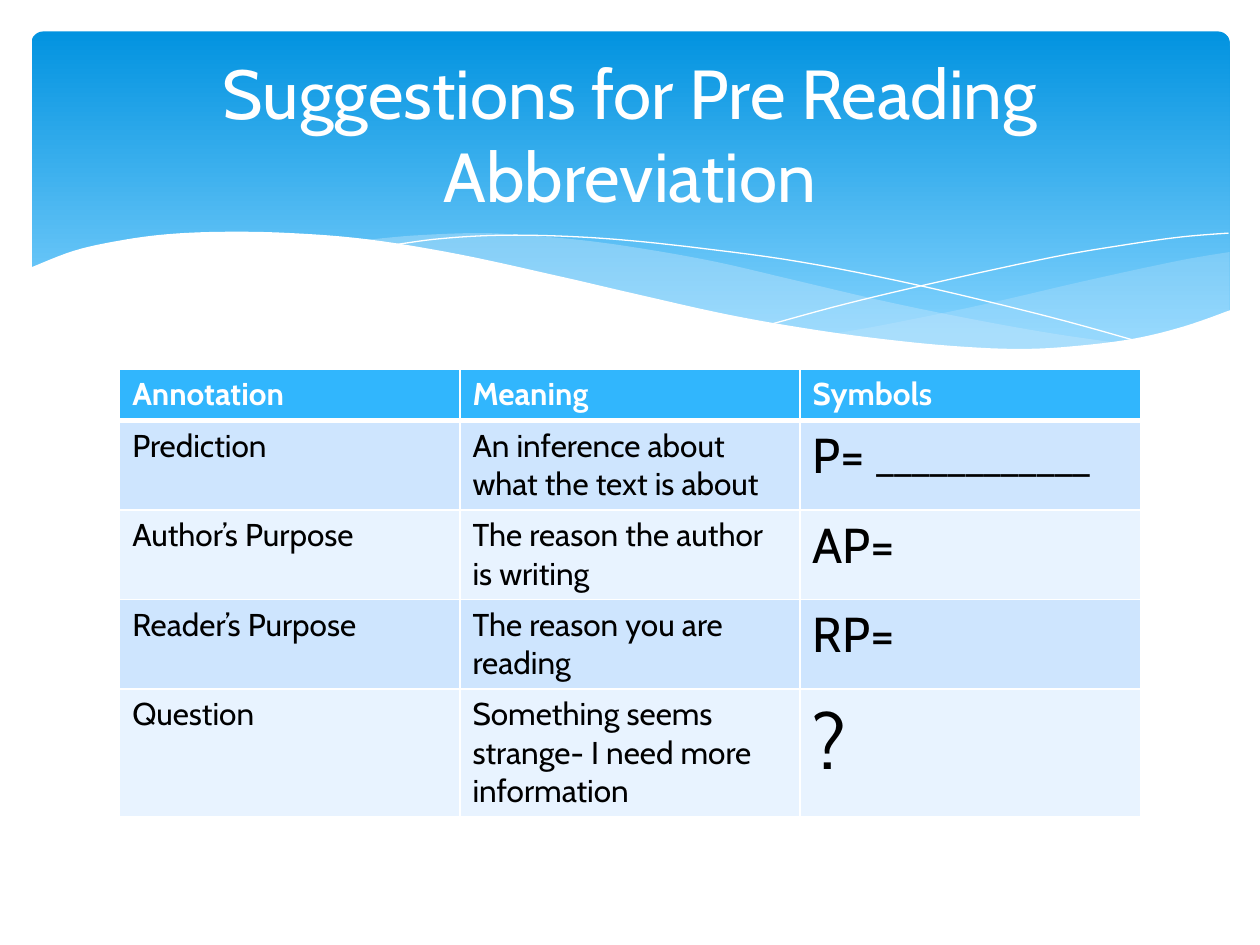
"""Build a slide with a wave banner and a table of pre-reading abbreviations."""
from lxml.etree import SubElement
from pptx import Presentation
from pptx.dml.color import RGBColor
from pptx.enum.shapes import MSO_SHAPE
from pptx.enum.text import MSO_ANCHOR, PP_ALIGN
from pptx.oxml.ns import qn
from pptx.util import Inches, Pt

WHITE = RGBColor(0xFF, 0xFF, 0xFF)
BLACK = RGBColor(0, 0, 0)
BANNER_TOP = RGBColor(0x02, 0x93, 0xE0)
BANNER_BOTTOM = RGBColor(0x83, 0xD3, 0xFE)
WAVE_BLUE = RGBColor(0xC6, 0xE7, 0xFC)
HEADER_BLUE = RGBColor(0x31, 0xB6, 0xFD)
BAND_DARK = RGBColor(0xCE, 0xE5, 0xFE)
BAND_LIGHT = RGBColor(0xE8, 0xF3, 0xFF)
FONT = "Cabin"


def add_text(paragraph, text, size=18, color=BLACK, bold=False):
    run = paragraph.add_run()
    run.text = text
    run.font.name = FONT
    run.font.size = Pt(size)
    run.font.color.rgb = color
    run.font.bold = bold


def smooth_curve(knots, steps=6):
    padded = [knots[0], *knots, knots[-1]]
    points = [tuple(Inches(value) for value in knots[0])]
    for before, start, end, after in zip(padded, padded[1:], padded[2:], padded[3:]):
        for step in range(1, steps + 1):
            t = step / steps
            points.append(tuple(
                Inches((2 * b + (c - a) * t + (2 * a - 5 * b + 4 * c - d) * t ** 2
                        + (3 * b - a - 3 * c + d) * t ** 3) / 2)
                for a, b, c, d in zip(before, start, end, after)))
    return points


presentation = Presentation()
presentation.slide_width = Inches(10)
presentation.slide_height = Inches(7.5)
slide = presentation.slides.add_slide(presentation.slide_layouts[6])

banner = slide.shapes.add_shape(
    MSO_SHAPE.ROUNDED_RECTANGLE, Inches(0.25), Inches(0.25), Inches(9.51), Inches(2.7))
banner.adjustments[0] = 0.034
banner.shadow.inherit = False
banner.line.fill.background()
banner.fill.gradient()
banner.fill.gradient_angle = 270
for stop, position, color in zip(
        banner.fill.gradient_stops, (0, 0.9), (BANNER_TOP, BANNER_BOTTOM)):
    stop.position = position
    stop.color.rgb = color

right_wave = [
    [(9.76, 2), (9.35, 2.07), (8.61, 2.23), (7.79, 2.42), (7.06, 2.57), (6.61, 2.65)],
    [(6.61, 2.65), (7.05, 2.71), (7.57, 2.76), (8.14, 2.78), (8.63, 2.75),
     (9.05, 2.69), (9.42, 2.59), (9.76, 2.47)],
]
middle_wave = [
    [(8.93, 2.73), (8.37, 2.65), (7.75, 2.54), (7.06, 2.4), (6.29, 2.22), (5.69, 2.08),
     (5.14, 1.98), (4.65, 1.91), (4.2, 1.87), (3.8, 1.85), (3.28, 1.87), (2.86, 1.91)],
    [(2.86, 1.91), (3.42, 1.99), (4.04, 2.11), (4.49, 2.22), (5.3, 2.4), (6.01, 2.55),
     (6.65, 2.66), (7.22, 2.74), (7.73, 2.77), (8.18, 2.78), (8.57, 2.77), (8.93, 2.73)],
]
falling_line = [
    [(3.09, 1.95), (3.44, 1.9), (3.87, 1.87), (4.33, 1.87), (4.89, 1.9), (5.56, 1.97),
     (6.36, 2.08), (7.27, 2.26), (8.31, 2.51), (9.07, 2.72)],
]
rising_line = [
    [(6.13, 2.57), (6.72, 2.41), (7.48, 2.23), (8.36, 2.04), (8.95, 1.94),
     (9.38, 1.88), (9.75, 1.85)],
]
white_wave = [
    [(9.77, 2.46), (9.4, 2.59), (8.99, 2.69), (8.5, 2.75), (8.09, 2.77), (7.61, 2.75),
     (7.08, 2.7), (6.48, 2.62), (5.79, 2.5), (5.03, 2.33), (4.47, 2.2), (3.65, 2.02),
     (2.92, 1.9), (2.3, 1.85), (1.77, 1.84), (1.32, 1.86), (0.95, 1.91), (0.59, 1.99),
     (0.23, 2.13)],
    [(0.23, 2.13), (0.23, 3.29)],
    [(0.23, 3.29), (9.77, 3.29)],
]
for curves, fill_color, opacity in (
        (right_wave, WAVE_BLUE, 29), (middle_wave, WAVE_BLUE, 40),
        (falling_line, None, 100), (rising_line, None, 100), (white_wave, WHITE, 100)):
    points = [point for curve in curves for point in smooth_curve(curve)]
    builder = slide.shapes.build_freeform(*points[0])
    builder.add_line_segments(points[1:], close=fill_color is not None)
    shape = builder.convert_to_shape()
    shape.shadow.inherit = False
    if fill_color is None:
        shape.fill.background()
        shape.line.color.rgb = WHITE
        shape.line.width = Pt(0)
        continue
    shape.line.fill.background()
    shape.fill.solid()
    shape.fill.fore_color.rgb = fill_color
    if opacity < 100:
        color_element = shape.fill._xPr.find(qn("a:solidFill"))[0]
        SubElement(color_element, qn("a:alpha"), val=str(opacity * 1000))

rows = [
    ("Annotation", "Meaning", "Symbols", 18),
    ("Prediction", "An inference about what the text is about", "P= ", 28),
    ("Author’s Purpose", "The reason the author is writing", "AP=", 28),
    ("Reader’s Purpose", "The reason you are reading", "RP=", 28),
    ("Question", "Something seems strange- I need more information", "?", 44),
]
row_heights = (0.4, 0.7, 0.7, 0.7, 1.01)
table = slide.shapes.add_table(
    len(rows), 3, Inches(0.95), Inches(2.93), Inches(8.1), Inches(3.51)).table
for column in table.columns:
    column.width = Inches(2.7)
for row_index, (*texts, symbol_size) in enumerate(rows):
    table.rows[row_index].height = Inches(row_heights[row_index])
    is_header = row_index == 0
    for column_index, text in enumerate(texts):
        cell = table.cell(row_index, column_index)
        properties = cell._tc.get_or_add_tcPr()
        for side in ("lnL", "lnR", "lnT", "lnB"):
            under_header = (row_index, side) in ((0, "lnB"), (1, "lnT"))
            border = SubElement(
                properties, qn(f"a:{side}"), w=str(Pt(3 if under_header else 1)))
            border_fill = SubElement(border, qn("a:solidFill"))
            SubElement(border_fill, qn("a:srgbClr"), val=str(WHITE))
        cell.fill.solid()
        cell.fill.fore_color.rgb = (
            HEADER_BLUE if is_header else BAND_DARK if row_index % 2 else BAND_LIGHT)
        add_text(cell.text_frame.paragraphs[0], text,
                 size=symbol_size if column_index == 2 else 18,
                 color=WHITE if is_header else BLACK, bold=is_header)
add_text(table.cell(1, 2).text_frame.paragraphs[0], "_" * 12)

title = slide.shapes.add_textbox(Inches(0.5), Inches(0.37), Inches(9), Inches(1.37))
title.text_frame.word_wrap = True
title.text_frame.vertical_anchor = MSO_ANCHOR.MIDDLE
title_paragraph = title.text_frame.paragraphs[0]
title_paragraph.alignment = PP_ALIGN.CENTER
add_text(title_paragraph, "Suggestions for Pre Reading Abbreviation", size=39.6, color=WHITE)

presentation.save("out.pptx")
